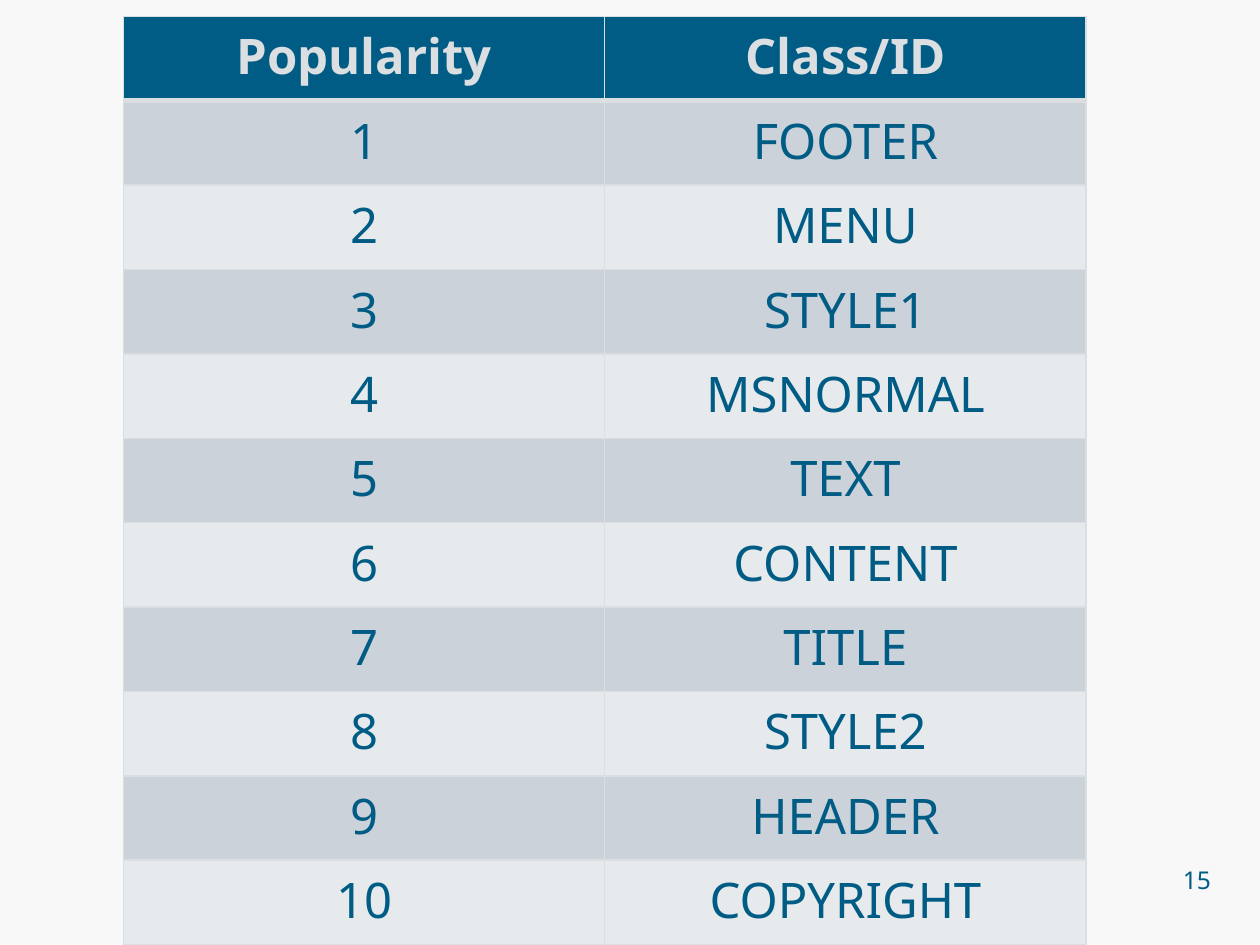
"""Build a slide with a table of the ten most popular class and ID names."""
from lxml.etree import SubElement
from pptx import Presentation
from pptx.dml.color import RGBColor
from pptx.enum.text import MSO_ANCHOR, PP_ALIGN
from pptx.oxml.ns import qn
from pptx.util import Inches, Pt

BLUE = RGBColor(0x00, 0x5C, 0x84)
PALE = RGBColor(0xDB, 0xDF, 0xE1)
DARK_BAND = RGBColor(0xCC, 0xD2, 0xD9)
LIGHT_BAND = RGBColor(0xE7, 0xEA, 0xED)
BACKGROUND = RGBColor(0xF8, 0xF8, 0xF8)
FONT = "Noto Sans"
NAMES = ["FOOTER", "MENU", "STYLE1", "MSNORMAL", "TEXT",
         "CONTENT", "TITLE", "STYLE2", "HEADER", "COPYRIGHT"]
ROWS = [("Popularity", "Class/ID")]
ROWS += [(str(rank), name) for rank, name in enumerate(NAMES, start=1)]
COLUMN_WIDTH, ROW_HEIGHT = Inches(3.82), Inches(0.67)


def style_paragraph(para, size, color, alignment, bold=False):
    para.alignment = alignment
    para.font.name = FONT
    para.font.size = Pt(size)
    para.font.bold = bold
    para.font.color.rgb = color


def add_border(cell, side, width):
    line = SubElement(cell._tc.get_or_add_tcPr(), qn(f"a:ln{side}"), w=str(Pt(width)))
    fill = SubElement(line, qn("a:solidFill"))
    SubElement(fill, qn("a:srgbClr"), val=str(PALE))


deck = Presentation()
deck.slide_width, deck.slide_height = Inches(10), Inches(7.5)
page = deck.slides.add_slide(deck.slide_layouts[6])
page.background.fill.solid()
page.background.fill.fore_color.rgb = BACKGROUND

box = page.shapes.add_textbox(Inches(7.52), Inches(6.9), Inches(2.09), Inches(0.2))
frame = box.text_frame
frame.word_wrap = True
frame.vertical_anchor = MSO_ANCHOR.BOTTOM
frame.margin_left = frame.margin_top = frame.margin_right = frame.margin_bottom = 0
frame.text = "15"
style_paragraph(frame.paragraphs[0], 14, BLUE, PP_ALIGN.RIGHT)

table = page.shapes.add_table(len(ROWS), 2, Inches(0.98), Inches(0.13),
                              2 * COLUMN_WIDTH, len(ROWS) * ROW_HEIGHT).table
for column in table.columns:
    column.width = COLUMN_WIDTH
for index, texts in enumerate(ROWS):
    table.rows[index].height = ROW_HEIGHT
    header = index == 0
    band = BLUE if header else DARK_BAND if index % 2 else LIGHT_BAND
    for cell, text in zip(table.rows[index].cells, texts):
        cell.text = text
        style_paragraph(cell.text_frame.paragraphs[0], 28,
                        PALE if header else BLUE, PP_ALIGN.CENTER, header)
        for side in "LRTB":
            thick = (side == "B" and header) or (side == "T" and index == 1)
            add_border(cell, side, 3 if thick else 1)
        cell.fill.solid()
        cell.fill.fore_color.rgb = band

deck.save("out.pptx")
